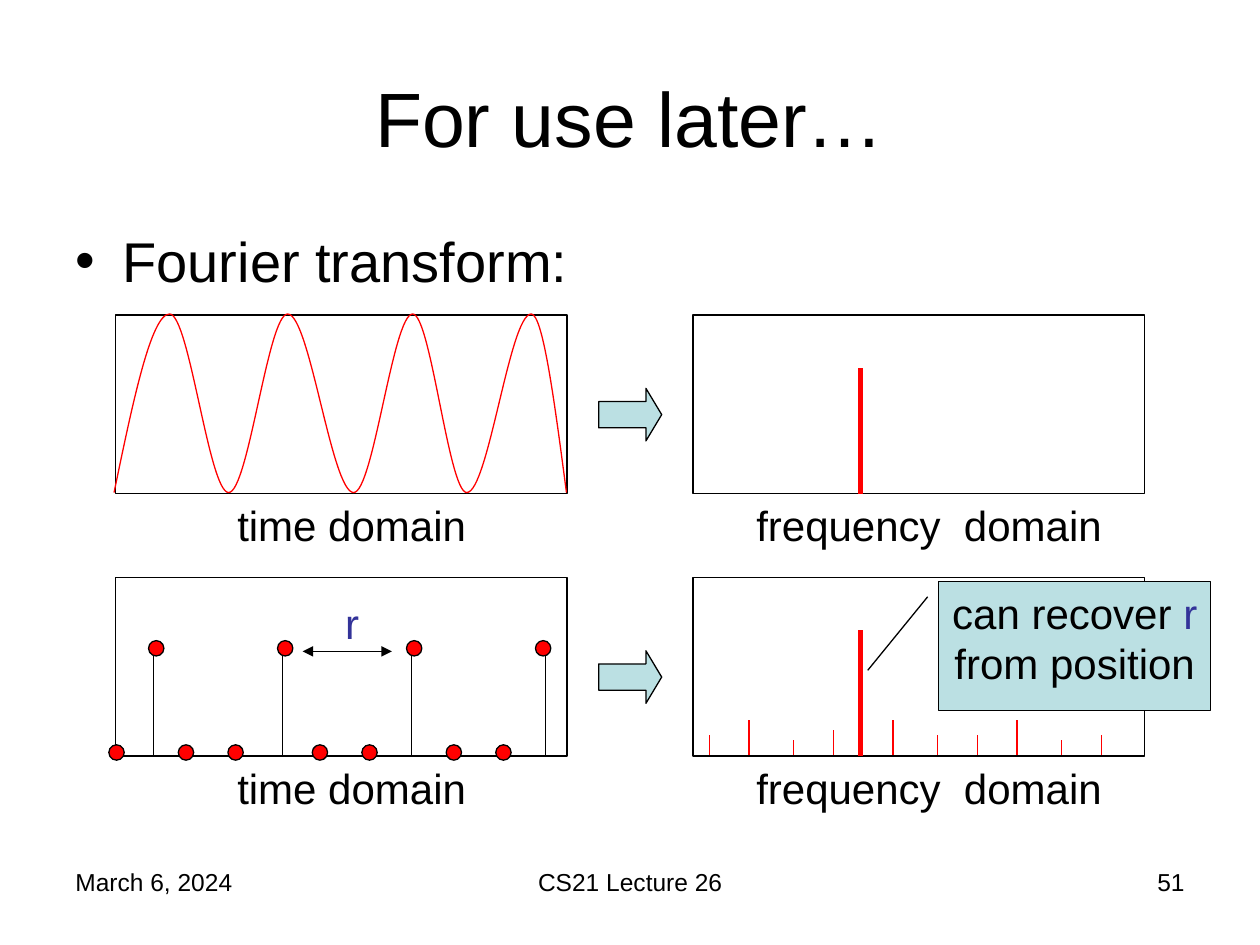
from lxml import etree
from pptx import Presentation
from pptx.dml.color import RGBColor
from pptx.enum import shapes, text
from pptx.oxml import ns
from pptx.util import Cm, Pt

COLORS = {"ink": "000000", "signal": "FF0000", "accent": "BBE0E3", "period": "333399"}
PANEL_W, PANEL_H = 9.1, 3.6
TIME_X, ARROW_X, FREQUENCY_X = 2.33, 12.07, 13.97
ROW_TOPS = (6.35, 11.64)


def rgb(name):
    """Look up a named colour."""
    return RGBColor.from_string(COLORS[name])


def format_runs(paragraph, size, color="ink"):
    """Set the font of every run in a paragraph."""
    for run in paragraph.runs:
        run.font.name, run.font.size = "Arial", Pt(size)
        run.font.color.rgb = rgb(color)


def add_label(slide, box, words, size, align="CENTER", color="ink", anchor="TOP"):
    """Place a line of text in a box and return its paragraph."""
    frame = slide.shapes.add_textbox(*map(Cm, box)).text_frame
    frame.word_wrap = True
    frame.vertical_anchor = getattr(text.MSO_ANCHOR, anchor)
    frame.text = words
    paragraph = frame.paragraphs[0]
    paragraph.alignment = getattr(text.PP_ALIGN, align)
    format_runs(paragraph, size, color)
    return paragraph


def add_figure(slide, kind, box, fill=None):
    """Place an outlined preset shape, filled if a colour is given."""
    figure = slide.shapes.add_shape(kind, *map(Cm, box))
    figure.shadow.inherit = False
    figure.line.color.rgb, figure.line.width = rgb("ink"), Pt(0.75)
    if fill:
        figure.fill.solid()
        figure.fill.fore_color.rgb = rgb(fill)
    else:
        figure.fill.background()
    return figure


def add_line(slide, start, end, color="ink", width=0.75):
    """Draw a straight line without shadow."""
    line = slide.shapes.add_connector(shapes.MSO_CONNECTOR.STRAIGHT, *map(Cm, start + end))
    line.line.color.rgb, line.line.width = rgb(color), Pt(width)
    etree.SubElement(line._element.spPr, ns.qn("a:effectLst"))
    return line


def add_heading(slide, left, top, width):
    """Place the title and the bulleted topic."""
    add_label(slide, (left, top, width, 3.18), "For use later…", 44, anchor="MIDDLE")
    topic = add_label(slide, (left, top + 3.69, width, 12.57), "Fourier transform:", 32, "LEFT")
    properties = topic._p.get_or_add_pPr()
    properties.set("marL", str(Cm(0.95)))
    properties.set("indent", str(Cm(-0.95)))
    etree.SubElement(properties, ns.qn("a:buFont")).set("typeface", "Arial")
    etree.SubElement(properties, ns.qn("a:buChar")).set("char", "•")


def add_footer(slide, left, top):
    """Place the date, the lecture and the page number."""
    for dx, width, words, align in (
        (0, 5.93, "March 6, 2024", "LEFT"),
        (7.41, 8.05, "CS21 Lecture 26", "CENTER"),
        (16.93, 5.93, "51", "RIGHT"),
    ):
        add_label(slide, (left + dx, top, width, 1.32), words, 14, align)


def add_transform(slide, top):
    """Draw the two captioned panels of a row, the arrow and the main frequency."""
    for left, dx, width, caption in (
        (TIME_X, 1.69, 6.14, "time domain"),
        (FREQUENCY_X, 0.63, 8.26, "frequency  domain"),
    ):
        add_figure(slide, shapes.MSO_SHAPE.RECTANGLE, (left, top, PANEL_W, PANEL_H))
        add_label(slide, (left + dx, top + PANEL_H, width, 1.27), caption, 24)
    arrow = add_figure(slide, shapes.MSO_SHAPE.RIGHT_ARROW, (ARROW_X, top + 1.48, 1.27, 1.06), "accent")
    arrow.adjustments[0], arrow.adjustments[1] = 0.5, 0.3
    peak_x = FREQUENCY_X + 3.38
    add_line(slide, (peak_x, top + PANEL_H), (peak_x, top + PANEL_H - 2.54), "signal", 3)


def add_wave(slide, left, top):
    """Draw the wave as one Bézier curve through its troughs and crests."""
    xs = (0, 1.12, 2.31, 3.5, 4.83, 6.02, 7.11, 8.41, 9.12)
    knots = [(Cm(x), Cm(PANEL_H * (1 - i % 2))) for i, x in enumerate(xs)]
    outline = slide.shapes.build_freeform(*knots[0])
    outline.add_line_segments(knots[1:], close=False)
    wave = outline.convert_to_shape(Cm(left), Cm(top))
    segments = list(wave._element.iter(ns.qn("a:lnTo")))
    for index, segment in enumerate(segments):
        (x0, y0), (x3, y3) = knots[index:index + 2]
        y1 = (y0 + y3) // 2 if index == 0 else y0
        y2 = (y0 + y3) // 2 if index == len(segments) - 1 else y3
        third = (x3 - x0) // 3
        segment.tag = ns.qn("a:cubicBezTo")
        for position, (x, y) in enumerate(((x0 + third, y1), (x3 - third, y2))):
            control = etree.Element(ns.qn("a:pt"), x=str(x), y=str(y))
            segment.insert(position, control)
    wave.shadow.inherit = False
    wave.fill.background()
    wave.line.color.rgb, wave.line.width = rgb("signal"), Pt(0.75)


def add_samples(slide, left, top):
    """Draw the periodic samples with the period r marked."""
    high, low, size = 1.43, 3.53, 0.31
    for x in (0.77, 3.36, 5.97, 8.67):
        add_line(slide, (left + x, top + 1.39), (left + x, top + 3.58))
    samples = [(0.82 + 2.6 * k, high) for k in range(4)]
    samples += [(x, low) for x in (0.02, 1.42, 2.42, 4.12, 5.12, 6.82, 7.82)]
    for x, y in samples:
        add_figure(slide, shapes.MSO_SHAPE.OVAL,
                   (left + x - size / 2, top + y - size / 2, size, size), "signal")
    span = add_line(slide, (left + 3.77, top + 1.49), (left + 5.57, top + 1.49))
    for end in ("a:headEnd", "a:tailEnd"):
        etree.SubElement(span.line._get_or_add_ln(), ns.qn(end)).set("type", "triangle")
    add_label(slide, (left + 4.38, top + 0.28, 0.99, 1.27), "r", 24, "LEFT", "period")


def add_spectrum(slide, left, top):
    """Draw the minor frequencies and the callout on the peak."""
    base = top + 3.58
    for x, height in ((0.33, 0.4), (1.13, 0.7), (2.03, 0.3), (2.83, 0.5), (4.03, 0.7),
                      (4.93, 0.4), (5.73, 0.4), (6.53, 0.7), (7.43, 0.3), (8.23, 0.4)):
        add_line(slide, (left + x, base - height), (left + x, base), "signal")
    callout = add_figure(slide, shapes.MSO_SHAPE.LINE_CALLOUT_1,
                         (left + 4.95, top + 0.08, 5.49, 2.6), "accent")
    for index, value in enumerate((0.12, -0.04, 0.69, -0.26)):
        callout.adjustments[index] = value
    frame = callout.text_frame
    frame.word_wrap = True
    frame.vertical_anchor = text.MSO_ANCHOR.TOP
    paragraph = frame.paragraphs[0]
    paragraph.alignment = text.PP_ALIGN.CENTER
    for words in ("can recover ", "r", " from position"):
        paragraph.add_run().text = words
    format_runs(paragraph, 24)
    paragraph.runs[1].font.color.rgb = rgb("period")


def main():
    """Build the slide and save it."""
    deck = Presentation()
    deck.slide_width, deck.slide_height = Cm(25.4), Cm(19.05)
    slide = deck.slides.add_slide(deck.slide_layouts[6])
    add_footer(slide, 1.27, 17.35)
    add_heading(slide, 1.27, 0.76, 22.86)
    for top in ROW_TOPS:
        add_transform(slide, top)
    add_wave(slide, TIME_X - 0.03, ROW_TOPS[0] - 0.02)
    add_samples(slide, TIME_X, ROW_TOPS[1])
    add_spectrum(slide, FREQUENCY_X, ROW_TOPS[1])
    deck.save("out.pptx")


if __name__ == "__main__":
    main()
